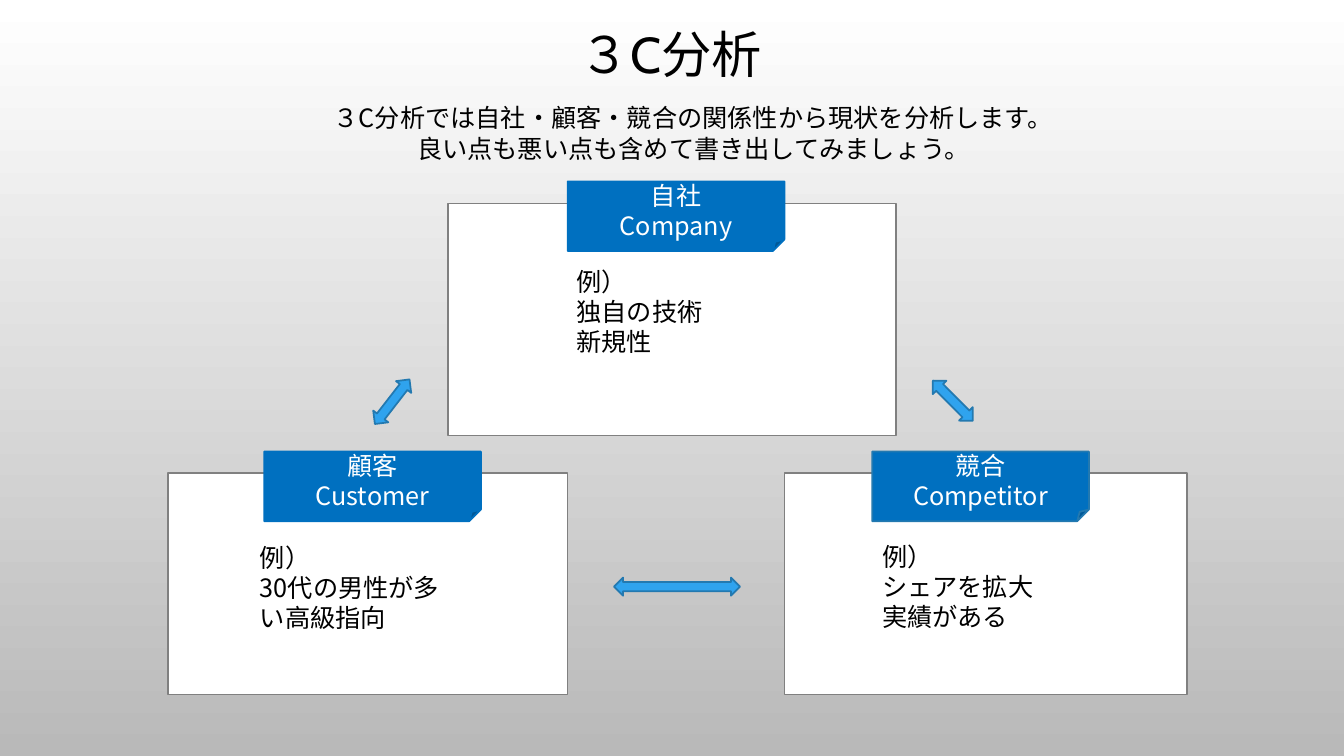
from pptx import Presentation
from pptx.dml.color import RGBColor
from pptx.enum.shapes import MSO_SHAPE
from pptx.enum.text import MSO_ANCHOR, PP_ALIGN
from pptx.util import Inches, Pt
from lxml.etree import SubElement
from pptx.oxml.ns import qn

BLACK = RGBColor(0x00, 0x00, 0x00)
WHITE = RGBColor(0xFF, 0xFF, 0xFF)
SILVER = RGBColor(0xB9, 0xB9, 0xB9)
GRAY = RGBColor(0x80, 0x80, 0x80)
BLUE = RGBColor(0x00, 0x70, 0xC0)
SKY = RGBColor(0x2F, 0xA3, 0xEE)
STEEL = RGBColor(0x23, 0x79, 0xB0)
FONT = "Noto Sans CJK JP"


def add_box(kind, box, fill, line):
    sp = slide.shapes.add_shape(kind, *map(Inches, box))
    sp.shadow.inherit = False
    sp.fill.solid()
    sp.fill.fore_color.rgb = fill
    sp.line.color.rgb = line
    sp.line.width = Pt(1.25)
    return sp


def write_lines(sp, lines, color, align):
    tf = sp.text_frame
    tf.word_wrap = True
    for i, line in enumerate(lines):
        p = tf.paragraphs[0] if i == 0 else tf.add_paragraph()
        p.alignment = align
        r = p.add_run()
        r.text = line
        for name, value in {"size": Pt(18), "name": FONT}.items():
            setattr(r.font, name, value)
        r.font.color.rgb = color
        SubElement(r.font._element, qn("a:ea"), typeface=FONT)


prs = Presentation()
prs.slide_width, prs.slide_height = Inches(13.33), Inches(7.5)
slide = prs.slides.add_slide(prs.slide_layouts[5])

fill = slide.background.fill
fill.gradient()
fill.gradient_angle = 270
for stop, color, position in zip(fill.gradient_stops, (WHITE, SILVER), (0, 1)):
    stop.color.rgb = color
    stop.position = position

title = slide.shapes.title
title.left, title.top, title.width, title.height = map(Inches, (0.99, 0.3, 11.33, 1.75))
tf = title.text_frame
tf.text = "３C分析"
tf.vertical_anchor = MSO_ANCHOR.TOP
tf.margin_top = 0
p = tf.paragraphs[0]
p.alignment = PP_ALIGN.CENTER
p.line_spacing = 0.9
for name, value in {"size": Pt(36), "name": "Cabin"}.items():
    setattr(p.runs[0].font, name, value)
p.runs[0].font.color.rgb = BLACK

for panel in ((4.44, 2.02, 4.45, 2.3), (7.78, 4.69, 3.99, 2.2), (1.67, 4.69, 3.96, 2.2)):
    add_box(MSO_SHAPE.RECTANGLE, panel, WHITE, GRAY)

for arrow, angle in (
    ((3.61, 3.89, 0.56, 0.19), 307.8),
    ((6.09, 5.73, 1.25, 0.18), 0),
    ((9.17, 3.88, 0.56, 0.19), 45.2),
):
    add_box(MSO_SHAPE.LEFT_RIGHT_ARROW, arrow, SKY, STEEL).rotation = angle

for left, top, line, names in (
    (5.63, 1.8, BLUE, ("自社", "Company")),
    (2.62, 4.48, BLUE, ("顧客", "Customer")),
    (8.65, 4.48, STEEL, ("競合", "Competitor")),
):
    tag = add_box(MSO_SHAPE.FOLDED_CORNER, (left, top, 2.15, 0.69), BLUE, line)
    tag.text_frame.vertical_anchor = MSO_ANCHOR.MIDDLE
    write_lines(tag, names, WHITE, PP_ALIGN.CENTER)

for box, lines, align in (
    ((2.48, 5.33, 2.16, 1.01), ("例）", "30代の男性が多い高級指向"), PP_ALIGN.LEFT),
    ((5.62, 2.59, 2.08, 1.01), ("例）", "独自の技術", "新規性"), PP_ALIGN.LEFT),
    ((8.65, 5.32, 2.15, 1.01), ("例）", "シェアを拡大", "実績がある"), PP_ALIGN.LEFT),
    (
        (1.67, 0.97, 10.41, 0.71),
        (
            "３C分析では自社・顧客・競合の関係性から現状を分析します。",
            "良い点も悪い点も含めて書き出してみましょう。",
        ),
        PP_ALIGN.CENTER,
    ),
):
    write_lines(slide.shapes.add_textbox(*map(Inches, box)), lines, BLACK, align)

prs.save("out.pptx")
